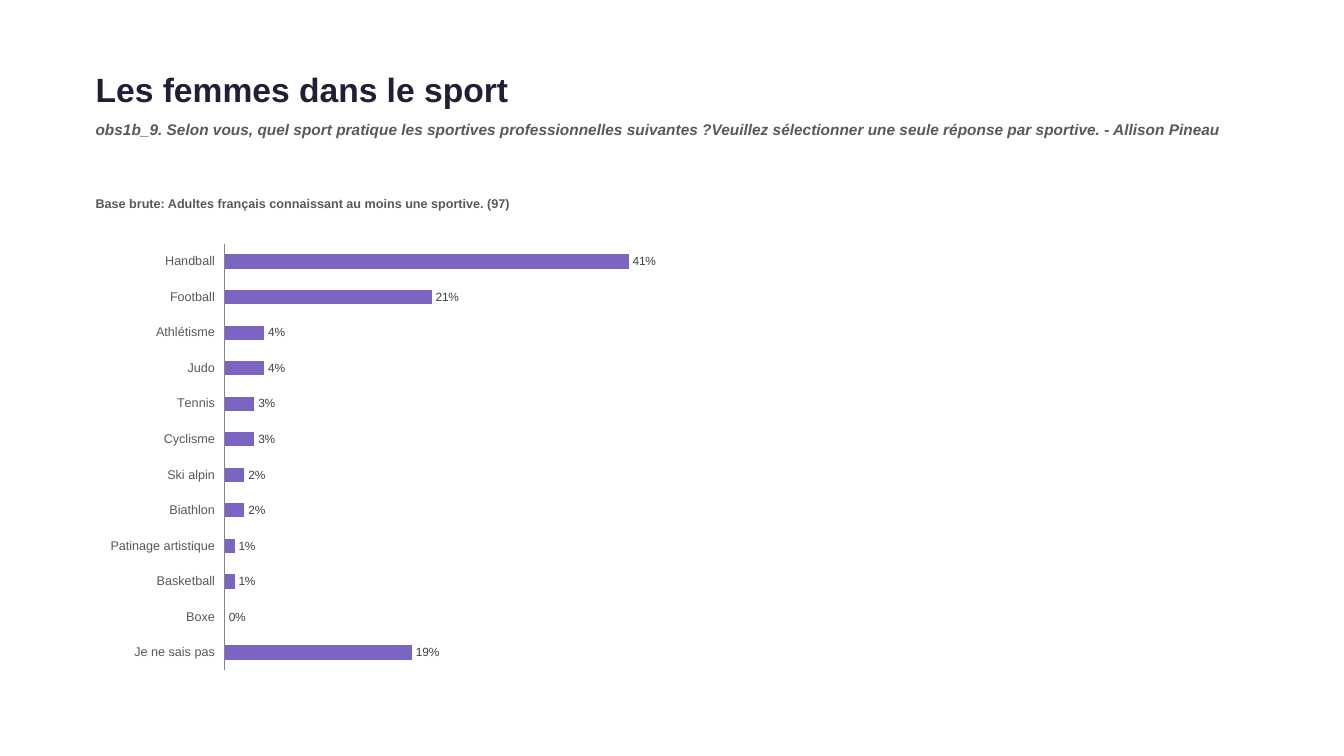
from dataclasses import dataclass

from lxml.etree import SubElement
from pptx import Presentation
from pptx.chart.data import CategoryChartData
from pptx.dml.color import RGBColor
from pptx.enum.chart import XL_CHART_TYPE as ChartType
from pptx.enum.chart import XL_LABEL_POSITION as LabelPosition
from pptx.enum.chart import XL_TICK_LABEL_POSITION as TickLabelPosition
from pptx.enum.chart import XL_TICK_MARK as TickMark
from pptx.enum.text import MSO_ANCHOR as Anchor
from pptx.oxml.ns import qn
from pptx.util import Cm, Pt


@dataclass(frozen=True)
class Theme:
    font: str = "Arial"
    title_color: str = "241D36"
    text_color: str = "595959"
    label_color: str = "404040"
    axis_color: str = "868686"
    bar_color: str = "7C64C3"
    title_size: float = 24
    question_size: float = 11
    base_size: float = 9
    category_size: float = 9
    label_size: float = 8.5


class SurveySlide:
    LEFT = 2.16

    def __init__(self, presentation, theme):
        self.theme = theme
        self.slide = presentation.slides.add_slide(presentation.slide_layouts[6])

    def style_font(self, font, size, color, bold=False, italic=False):
        font.name = self.theme.font
        font.size = Pt(size)
        font.color.rgb = RGBColor.from_string(color)
        font.bold = bold
        font.italic = italic

    def add_text(self, text, top, height, size, color, italic=False, anchor=Anchor.TOP):
        box = self.slide.shapes.add_textbox(Cm(self.LEFT), Cm(top), Cm(29.54), Cm(height))
        frame = box.text_frame
        frame.word_wrap = True
        frame.vertical_anchor = anchor
        paragraph = frame.paragraphs[0]
        paragraph.text = text
        self.style_font(paragraph.font, size, color, bold=True, italic=italic)

    def add_bar_chart(self, shares, top, height):
        """Draw the shares from top to bottom in the order given."""
        data = CategoryChartData(number_format="0%")
        # Horizontal bars are stacked upwards from the first category
        data.categories = list(reversed(shares))
        data.add_series("Series 1", list(reversed(shares.values())))
        chart = self.slide.shapes.add_chart(
            ChartType.BAR_CLUSTERED, Cm(self.LEFT), Cm(top), Cm(29.21), Cm(height), data
        ).chart
        chart.has_legend = False
        chart.has_title = False
        chart.font.name = self.theme.font
        chart.font.size = Pt(18)
        self.style_axes(chart)
        self.style_bars(chart.plots[0])
        self.place_plot(chart, x=0.12, y=0.02, w=0.85, h=0.96)

    def style_axes(self, chart):
        category_axis = chart.category_axis
        category_axis.has_major_gridlines = False
        category_axis.major_tick_mark = TickMark.NONE
        category_axis.minor_tick_mark = TickMark.NONE
        category_axis.tick_label_position = TickLabelPosition.LOW
        category_axis.format.line.color.rgb = RGBColor.from_string(self.theme.axis_color)
        category_axis.format.line.width = Pt(0.75)
        self.style_font(category_axis.tick_labels.font,
                        self.theme.category_size, self.theme.text_color)

        value_axis = chart.value_axis
        value_axis.minimum_scale = 0
        value_axis.maximum_scale = 1
        value_axis.major_unit = 0.1
        value_axis.has_major_gridlines = False
        value_axis.visible = False

    def style_bars(self, plot):
        plot.gap_width = 150
        plot.overlap = -10
        plot.vary_by_categories = False
        fill = plot.series[0].format.fill
        fill.solid()
        fill.fore_color.rgb = RGBColor.from_string(self.theme.bar_color)

        labels = plot.series[0].data_labels
        labels.show_value = True
        labels.position = LabelPosition.OUTSIDE_END
        labels.number_format = "0%"
        labels.number_format_is_linked = False
        self.style_font(labels.font, self.theme.label_size, self.theme.label_color)

    def place_plot(self, chart, **fractions):
        """Fix the inner plot area as fractions of the chart frame."""
        plot_area = chart.element.find(".//" + qn("c:plotArea"))
        for automatic_layout in plot_area.findall(qn("c:layout")):
            plot_area.remove(automatic_layout)
        layout = SubElement(plot_area, qn("c:layout"))
        plot_area.insert(0, layout)
        manual = SubElement(layout, qn("c:manualLayout"))
        settings = {"layoutTarget": "inner", "xMode": "edge", "yMode": "edge", **fractions}
        for name, value in settings.items():
            SubElement(manual, qn(f"c:{name}")).set("val", str(value))


def main():
    presentation = Presentation()
    presentation.slide_width = Cm(33.87)
    presentation.slide_height = Cm(19.05)
    theme = Theme()
    survey = SurveySlide(presentation, theme)

    # Title, question and sample base
    survey.add_text("Les femmes dans le sport", 1.6, 1.27,
                    theme.title_size, theme.title_color, anchor=Anchor.MIDDLE)
    survey.add_text(
        "obs1b_9. Selon vous, quel sport pratique les sportives professionnelles suivantes ?"
        "Veuillez sélectionner une seule réponse par sportive. - Allison Pineau",
        2.9, 1.9, theme.question_size, theme.text_color, italic=True)
    survey.add_text("Base brute: Adultes français connaissant au moins une sportive. (97)",
                    4.8, 1.12, theme.base_size, theme.text_color)

    # Share of answers per sport
    shares = {
        "Handball": 0.41,
        "Football": 0.21,
        "Athlétisme": 0.04,
        "Judo": 0.04,
        "Tennis": 0.03,
        "Cyclisme": 0.03,
        "Ski alpin": 0.02,
        "Biathlon": 0.02,
        "Patinage artistique": 0.01,
        "Basketball": 0.01,
        "Boxe": 0,
        "Je ne sais pas": 0.19,
    }
    survey.add_bar_chart(shares, 5.92, 11.2)

    presentation.save("out.pptx")


if __name__ == "__main__":
    main()
